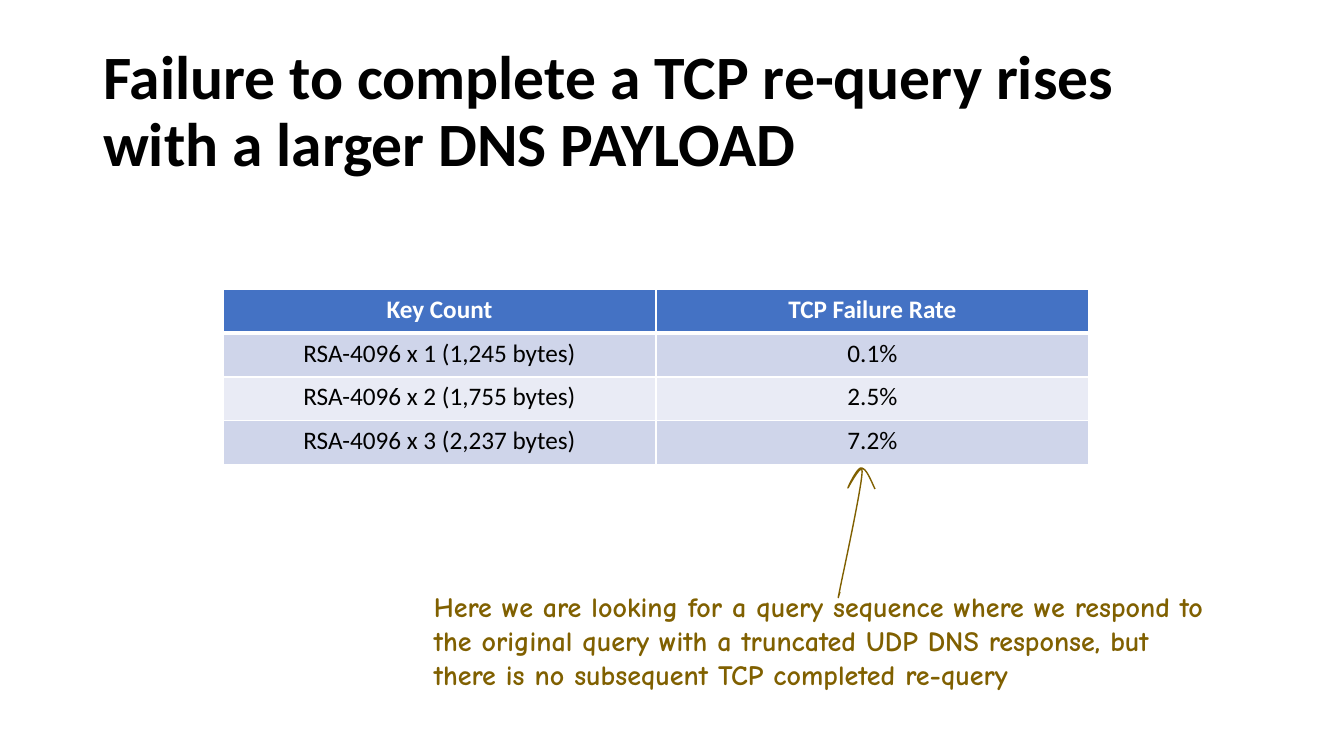
from dataclasses import dataclass
from itertools import product

from lxml.etree import SubElement
from pptx import Presentation
from pptx.dml.color import RGBColor
from pptx.enum.text import MSO_ANCHOR as Anchor, MSO_AUTO_SIZE as AutoSize, PP_ALIGN as Align
from pptx.oxml.ns import qn
from pptx.util import Pt

TITLE = "Failure to complete a TCP re-query rises with a larger DNS PAYLOAD"
ROWS = [
    ("Key Count", "TCP Failure Rate"),
    ("RSA-4096 x 1 (1,245 bytes)", "0.1%"),
    ("RSA-4096 x 2 (1,755 bytes)", "2.5%"),
    ("RSA-4096 x 3 (2,237 bytes)", "7.2%"),
]
NOTE = ("Here we are looking for a query sequence where we respond to the original query "
        "with a truncated UDP DNS response, but there is no subsequent TCP completed re-query")

# Left, top, width, height in px
TITLE_BOX = (93, 40, 1159, 146)
TABLE_BOX = (223, 289, 866, 176)
NOTE_BOX = (424, 585, 795, 78)

# Hand-drawn arrow in px: a start, then two control points and an end per curve
ARROW_START = (840, 592)
ARROW_CURVES = [
    ((838, 598), (837, 604), (841, 584)),
    ((845, 565), (861, 490), (862, 474)),
    ((864, 458), (848, 488), (848, 488)),
    ((848, 487), (857, 468), (861, 468)),
    ((866, 468), (870, 478), (875, 489)),
]
CURVE_STEPS = 16


@dataclass(frozen=True)
class Theme:
    font: str = "Calibri"
    note_font: str = "Comic Neue"
    text: str = "000000"
    white: str = "FFFFFF"
    header: str = "4472C4"
    bands: tuple = ("CFD5EA", "E9EBF5")
    note: str = "806000"
    title_size: int = 44
    cell_size: int = 18
    note_size: int = 20
    thin: int = 1
    thick: int = 3


T = Theme()


def px(n):
    return round(n * 914400 / 100.8)


def rgb(color):
    return RGBColor.from_string(color)


def add_run(p, text, font, size, color, bold):
    r = p.add_run()
    r.text = text
    r.font.name, r.font.size, r.font.bold = font, Pt(size), bold
    r.font.color.rgb = rgb(color)


def add_title(s):
    title = s.shapes.title
    title.left, title.top, title.width, title.height = map(px, TITLE_BOX)
    tf = title.text_frame
    tf.word_wrap, tf.auto_size = True, AutoSize.NONE
    tf.vertical_anchor = Anchor.MIDDLE
    p = tf.paragraphs[0]
    p.alignment, p.line_spacing = Align.LEFT, 0.9
    add_run(p, TITLE, T.font, T.title_size, T.text, True)


def set_borders(cell, top, bottom):
    tc_pr = cell._tc.get_or_add_tcPr()
    for side, width in (("L", T.thin), ("R", T.thin), ("T", top), ("B", bottom)):
        ln = SubElement(tc_pr, qn(f"a:ln{side}"), w=str(Pt(width)))
        fill = SubElement(ln, qn("a:solidFill"))
        SubElement(fill, qn("a:srgbClr"), val=T.white)


def add_table(s):
    n_rows, n_cols = len(ROWS), len(ROWS[0])
    table = s.shapes.add_table(n_rows, n_cols, *map(px, TABLE_BOX)).table
    for row in table.rows:
        row.height = px(TABLE_BOX[3] / n_rows)
    for i, j in product(range(n_rows), range(n_cols)):
        cell, header = table.cell(i, j), i == 0
        set_borders(cell, T.thick if i == 1 else T.thin, T.thick if header else T.thin)
        cell.fill.solid()
        cell.fill.fore_color.rgb = rgb(T.header if header else T.bands[(i - 1) % 2])
        p = cell.text_frame.paragraphs[0]
        p.alignment = Align.CENTER
        add_run(p, ROWS[i][j], T.font, T.cell_size, T.white if header else T.text, header)


def add_note(s):
    tf = s.shapes.add_textbox(*map(px, NOTE_BOX)).text_frame
    tf.word_wrap = True
    add_run(tf.paragraphs[0], NOTE, T.note_font, T.note_size, T.note, True)


def bezier(a, b, c, d, t):
    """Return the point at t on the cubic curve from a to d."""
    u = 1 - t
    return tuple(px(u**3 * k + 3 * u * u * t * m + 3 * u * t * t * n + t**3 * q)
                 for k, m, n, q in zip(a, b, c, d))


def add_arrow(s):
    points, start = [], ARROW_START
    for b, c, end in ARROW_CURVES:
        points += [bezier(start, b, c, end, i / CURVE_STEPS) for i in range(1, CURVE_STEPS + 1)]
        start = end
    builder = s.shapes.build_freeform(*map(px, ARROW_START))
    builder.add_line_segments(points, close=False)
    arrow = builder.convert_to_shape()
    arrow.shadow.inherit = False
    arrow.fill.background()
    arrow.line.color.rgb = rgb(T.note)
    arrow.line.width = Pt(T.thin)


def main():
    prs = Presentation()
    prs.slide_width, prs.slide_height = px(1344), px(756)
    s = prs.slides.add_slide(prs.slide_layouts.get_by_name("Title Only"))
    add_title(s)
    add_table(s)
    add_note(s)
    add_arrow(s)
    prs.save("out.pptx")


if __name__ == "__main__":
    main()
